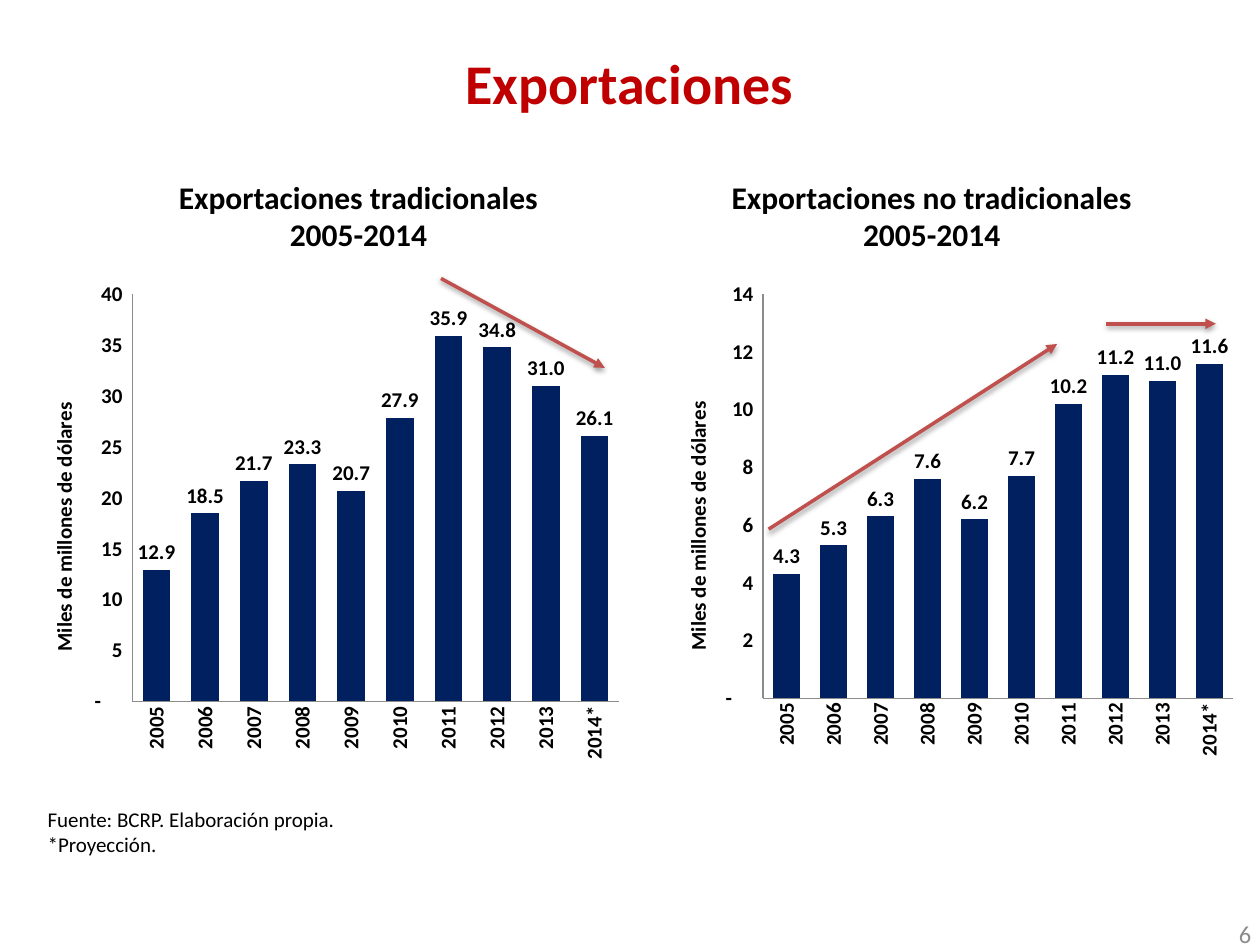
from lxml import etree
from pptx import Presentation
from pptx.chart.data import CategoryChartData
from pptx.dml.color import RGBColor
from pptx.enum.chart import XL_CHART_TYPE, XL_LABEL_POSITION, XL_TICK_MARK
from pptx.enum.shapes import MSO_CONNECTOR
from pptx.enum.text import MSO_ANCHOR, PP_ALIGN
from pptx.oxml import parse_xml
from pptx.oxml.ns import nsdecls, qn
from pptx.util import Inches, Pt

COLUMNS = XL_CHART_TYPE.COLUMN_CLUSTERED
OUTSIDE = XL_LABEL_POSITION.OUTSIDE_END
NO_TICK = XL_TICK_MARK.NONE
STRAIGHT = MSO_CONNECTOR.STRAIGHT
TOP, MIDDLE = MSO_ANCHOR.TOP, MSO_ANCHOR.MIDDLE
LEFT, CENTER, RIGHT = PP_ALIGN.LEFT, PP_ALIGN.CENTER, PP_ALIGN.RIGHT

FONT = "Calibri"
WHITE = RGBColor(0xFF, 0xFF, 0xFF)
BLACK = RGBColor(0, 0, 0)
RED = RGBColor(0xC0, 0, 0)
NAVY = RGBColor(0, 0x20, 0x60)
BRICK = RGBColor(0xC0, 0x50, 0x4D)
GRAY = RGBColor(0x8C, 0x8C, 0x8C)

YEARS = [str(y) for y in range(2005, 2014)] + ["2014*"]
AXIS_TITLE = "Miles de millones de dólares"
AXIS_FORMAT = '_ * #,##0_ ;_ * \\-#,##0_ ;_ * "-"??_ ;_ '
PANELS = [
    ("Exportaciones tradicionales", (1.32, 1.36, 3.05, 0.71),
     (0.12, 2.18, 4.89, 3.94), 40, 5,
     (12.9, 18.5, 21.7, 23.3, 20.7, 27.9, 35.9, 34.8, 31.0, 26.1)),
    ("Exportaciones no tradicionales", (5.63, 1.36, 3.53, 0.71),
     (5.16, 2.18, 4.72, 3.91), 14, 2,
     (4.3, 5.3, 6.3, 7.6, 6.2, 7.7, 10.2, 11.2, 11.0, 11.6)),
]
ARROWS = [
    (3.5, 2.21, 4.8, 2.92),
    (8.78, 2.57, 9.65, 2.57),
    (6.1, 4.2, 8.39, 2.73),
]


def style_font(font, size, color=BLACK, bold=False):
    """Set the typeface, size, colour and weight of a font."""
    font.name, font.size, font.bold = FONT, Pt(size), bold
    font.color.rgb = color


def write_lines(tf, lines, size, color=BLACK, bold=False, align=LEFT):
    """Write one paragraph per line into a text frame."""
    for i, line in enumerate(lines):
        p = tf.add_paragraph() if i else tf.paragraphs[0]
        p.alignment = align
        r = p.add_run()
        r.text = line
        style_font(r.font, size, color, bold)


def add_title(slide, text):
    """Place and fill the title placeholder."""
    sp = slide.shapes.title
    sp.left, sp.top, sp.width, sp.height = map(Inches, (0.27, 0.28, 9.45, 0.81))
    sp.fill.solid()
    sp.fill.fore_color.rgb = WHITE
    sp.text_frame.vertical_anchor = MIDDLE
    write_lines(sp.text_frame, [text], 32, RED, True, CENTER)
    sp.text_frame.paragraphs[0].line_spacing = 0.9


def add_text(slide, box, lines, size, anchor=TOP, wrap=True, **style):
    """Add a text box."""
    tf = slide.shapes.add_textbox(*map(Inches, box)).text_frame
    tf.word_wrap, tf.vertical_anchor = wrap, anchor
    write_lines(tf, lines, size, **style)


def set_layout(parent, index, **shares):
    """Fix a chart part at shares of the chart's size."""
    for old in parent.findall(qn("c:layout")):
        parent.remove(old)
    layout = etree.Element(qn("c:layout"))
    manual = etree.SubElement(layout, qn("c:manualLayout"))
    if "w" in shares:
        etree.SubElement(manual, qn("c:layoutTarget")).set("val", "inner")
    for mode in ("xMode", "yMode"):
        etree.SubElement(manual, qn(f"c:{mode}")).set("val", "edge")
    for key, share in shares.items():
        etree.SubElement(manual, qn(f"c:{key}")).set("val", str(share))
    parent.insert(index, layout)


def style_axes(chart, top, step):
    """Format the category and value axes."""
    cat, val = chart.category_axis, chart.value_axis
    for axis in (cat, val):
        axis.major_tick_mark = axis.minor_tick_mark = NO_TICK
        axis.has_major_gridlines = False
        axis.format.line.color.rgb = GRAY
        style_font(axis.tick_labels.font, 12, bold=True)
    cat.tick_labels.font._element.getparent().getparent().getparent().find(
        qn("a:bodyPr")).set("rot", "-5400000")
    val.minimum_scale, val.maximum_scale, val.major_unit = 0, top, step
    val.tick_labels.number_format = AXIS_FORMAT
    val.tick_labels.number_format_is_linked = False
    title = val.axis_title
    write_lines(title.text_frame, [AXIS_TITLE], 12, bold=True, align=CENTER)
    body = title.text_frame._txBody.find(qn("a:bodyPr"))
    body.set("rot", "-5400000")
    body.set("vert", "horz")
    set_layout(title._element, 1, x=0.05, y=0.25)


def add_columns(slide, box, top, step, values):
    """Add a labelled column chart."""
    data = CategoryChartData(number_format="#,##0.0")
    data.categories = YEARS
    data.add_series("Series 1", values)
    chart = slide.shapes.add_chart(COLUMNS, *map(Inches, box), data).chart
    chart.has_legend = chart.has_title = False
    style_font(chart.font, 12, bold=True)
    style_axes(chart, top, step)
    plot = chart.plots[0]
    plot.gap_width, plot.vary_by_categories = 75, False
    fill = plot.series[0].format.fill
    fill.solid()
    fill.fore_color.rgb = NAVY
    plot.has_data_labels = True
    labels = plot.data_labels
    labels.show_value, labels.position = True, OUTSIDE
    labels.number_format, labels.number_format_is_linked = "#,##0.0", False
    style_font(labels.font, 12, bold=True)
    area = chart._chartSpace.find(".//" + qn("c:plotArea"))
    set_layout(area, 0, x=0.19, y=0.04, w=0.79, h=0.82)


def add_arrow(slide, ends):
    """Add a trend arrow with a soft shadow."""
    line = slide.shapes.add_connector(STRAIGHT, *map(Inches, ends))
    line.line.color.rgb = BRICK
    line.line.width = Pt(2)
    ln = line.line._get_or_add_ln()
    etree.SubElement(ln, qn("a:tailEnd")).set("type", "triangle")
    line._element.spPr.append(parse_xml(
        f'<a:effectLst {nsdecls("a")}>'
        '<a:outerShdw blurRad="40000" dist="20000" dir="5400000" rotWithShape="0">'
        '<a:srgbClr val="000000"><a:alpha val="38000"/></a:srgbClr>'
        '</a:outerShdw></a:effectLst>'))


def main():
    """Build the exports slide."""
    prs = Presentation()
    prs.slide_width, prs.slide_height = Inches(10), Inches(7.5)
    slide = prs.slides.add_slide(prs.slide_layouts[5])
    add_title(slide, "Exportaciones")
    for heading, heading_box, chart_box, top, step, values in PANELS:
        add_columns(slide, chart_box, top, step, values)
        add_text(slide, heading_box, [heading, "2005-2014"], 18,
                 bold=True, align=CENTER)
    for ends in ARROWS:
        add_arrow(slide, ends)
    add_text(slide, (0.28, 6.35, 2.5, 0.5),
             ["Fuente: BCRP. Elaboración propia.", "*Proyección."], 12, wrap=False)
    add_text(slide, (7.7, 7.21, 2.33, 0.4), ["6"], 14, MIDDLE,
             color=GRAY, align=RIGHT)
    prs.save("out.pptx")


if __name__ == "__main__":
    main()
